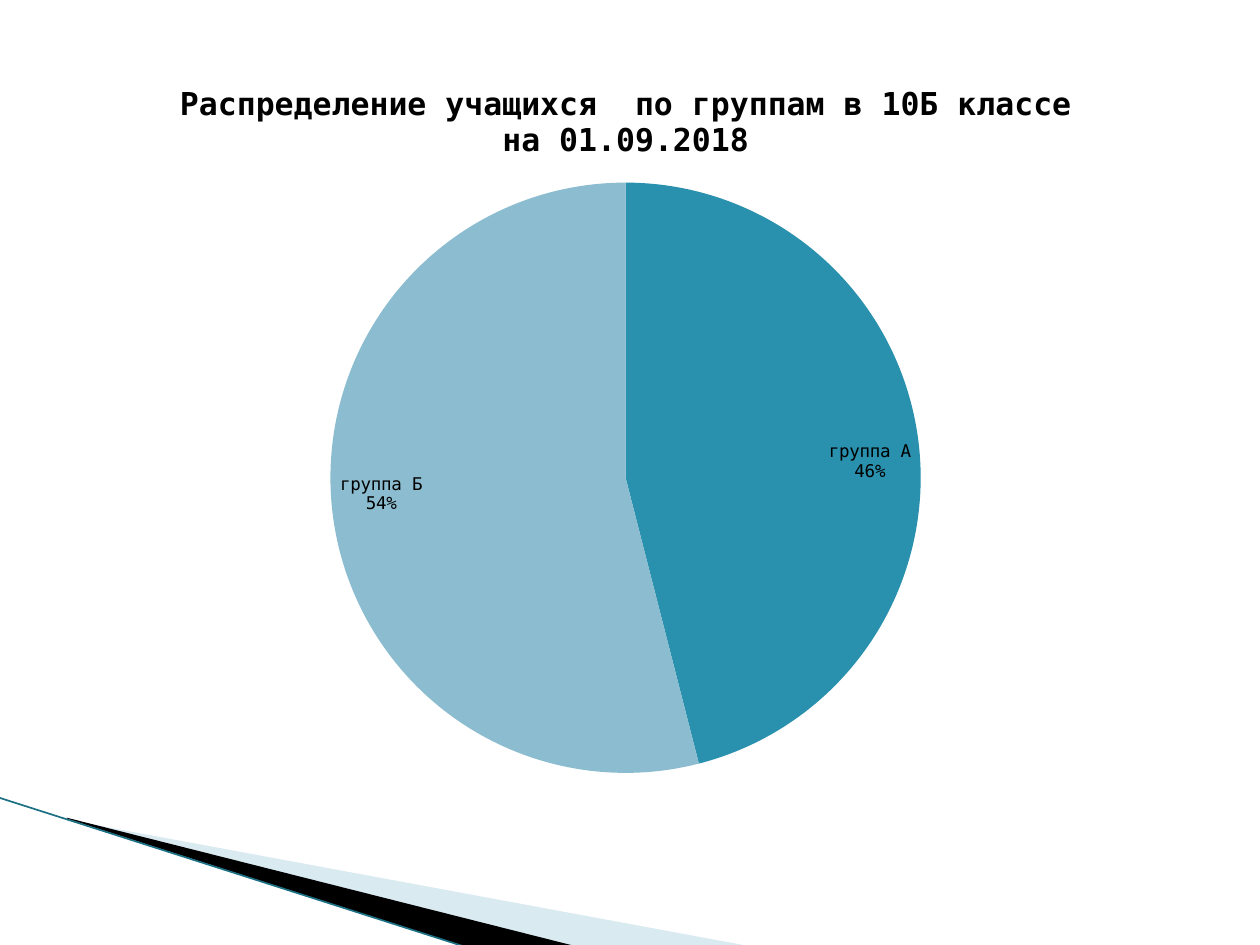
from lxml import etree
from pptx import Presentation
from pptx.chart.data import CategoryChartData
from pptx.dml.color import RGBColor
from pptx.enum.chart import XL_CHART_TYPE, XL_LABEL_POSITION
from pptx.enum.shapes import MSO_CONNECTOR
from pptx.oxml.ns import qn
from pptx.util import Inches, Pt

PIE = XL_CHART_TYPE.PIE
INSIDE = XL_LABEL_POSITION.INSIDE_END
STRAIGHT = MSO_CONNECTOR.STRAIGHT


def hue(code):
    return RGBColor.from_string(code)


def add(parent, tag, val=None):
    node = etree.SubElement(parent, qn(tag))
    if val is not None:
        node.set("val", str(val))
    return node


class Page:
    """Style and current slide; lengths are percent of the slide's size."""
    face = "DejaVu Sans Mono"
    ink = "000000"

    def __init__(self, deck):
        self.wide, self.high = deck.slide_width, deck.slide_height
        self.slide = deck.slides.add_slide(deck.slide_layouts[6])
        self.shapes = self.slide.shapes

    def spot(self, x, y):
        return round(self.wide * x / 100), round(self.high * y / 100)

    def wedge(self, points, code, alpha=100):
        start, *rest = [self.spot(*p) for p in points]
        form = self.shapes.build_freeform(*start)
        form.add_line_segments(rest, close=True)
        shape = form.convert_to_shape()
        shape.shadow.inherit = False
        shape.line.fill.background()
        shape.fill.solid()
        shape.fill.fore_color.rgb = hue(code)
        if alpha < 100:
            paint = shape.element.spPr.find(".//" + qn("a:srgbClr"))
            add(paint, "a:alpha", alpha * 1000)

    def line(self, start, end, code, width):
        line = self.shapes.add_connector(
            STRAIGHT, *self.spot(*start), *self.spot(*end))
        line.line.color.rgb = hue(code)
        line.line.width = Pt(width)
        add(line.element.spPr, "a:effectLst")

    def style(self, font, size, bold=False):
        font.name, font.size, font.bold = self.face, Pt(size), bold
        font.color.rgb = hue(self.ink)

    def pie(self, place, size, title, parts, plot):
        data = CategoryChartData()
        data.categories = [name for name, _, _ in parts]
        data.add_series("Series 1", [value for _, value, _ in parts])
        chart = self.shapes.add_chart(
            PIE, *self.spot(*place), *self.spot(*size), data).chart
        self.style(chart.font, 10)
        chart.has_legend = False

        # Title
        chart.has_title = True
        frame = chart.chart_title.text_frame
        frame.text = title
        self.style(frame.paragraphs[0].runs[0].font, 18, True)

        # Slices
        pie = chart.plots[0]
        pie.vary_by_categories = True
        for i, (_, _, code) in enumerate(parts):
            fill = pie.series[0].points[i].format.fill
            fill.solid()
            fill.fore_color.rgb = hue(code)

        # Labels
        pie.has_data_labels = True
        tags = pie.data_labels
        tags.show_category_name = tags.show_percentage = True
        tags.show_value = False
        tags.number_format, tags.number_format_is_linked = "0%", False
        tags.position = INSIDE
        self.style(tags.font, 10)
        mark = etree.Element(qn("c:separator"))
        mark.text = "\n"
        tags._element.find(qn("c:showBubbleSize")).addnext(mark)

        # Plot area, as shares of the chart
        area = chart._chartSpace.find(".//" + qn("c:plotArea"))
        for old in area.findall(qn("c:layout")):
            area.remove(old)
        box = etree.Element(qn("c:layout"))
        area.insert(0, box)
        rule = add(box, "c:manualLayout")
        add(rule, "c:layoutTarget", "inner")
        for mode in ("xMode", "yMode"):
            add(rule, "c:" + mode, "edge")
        for key, share in zip("xywh", plot):
            add(rule, "c:" + key, share)


def main():
    deck = Presentation()
    deck.slide_width, deck.slide_height = Inches(10), Inches(7.5)
    page = Page(deck)

    # Corner wedges
    page.wedge([(5.5, 86.8), (59.5, 100.13), (45.6, 100.13), (5.5, 86.67)],
               "A0CBDC", 40)
    page.wedge([(5.3, 86.53), (45.7, 100.13), (37.2, 100.27), (5.4, 86.67)],
               "000000")
    page.line((-0.1, 84.4), (37.1, 100.27), "1B7083", 0.95)

    # Group shares
    page.pie((2.8, 5.87), (93.7, 77.73),
             "Распределение учащихся  по группам в 10Б классе на 01.09.2018",
             [("группа А", 46, "2990AD"), ("группа Б", 54, "8BBCCF")],
             (0.25, 0.17, 0.5, 0.81))

    deck.save("out.pptx")


if __name__ == "__main__":
    main()
